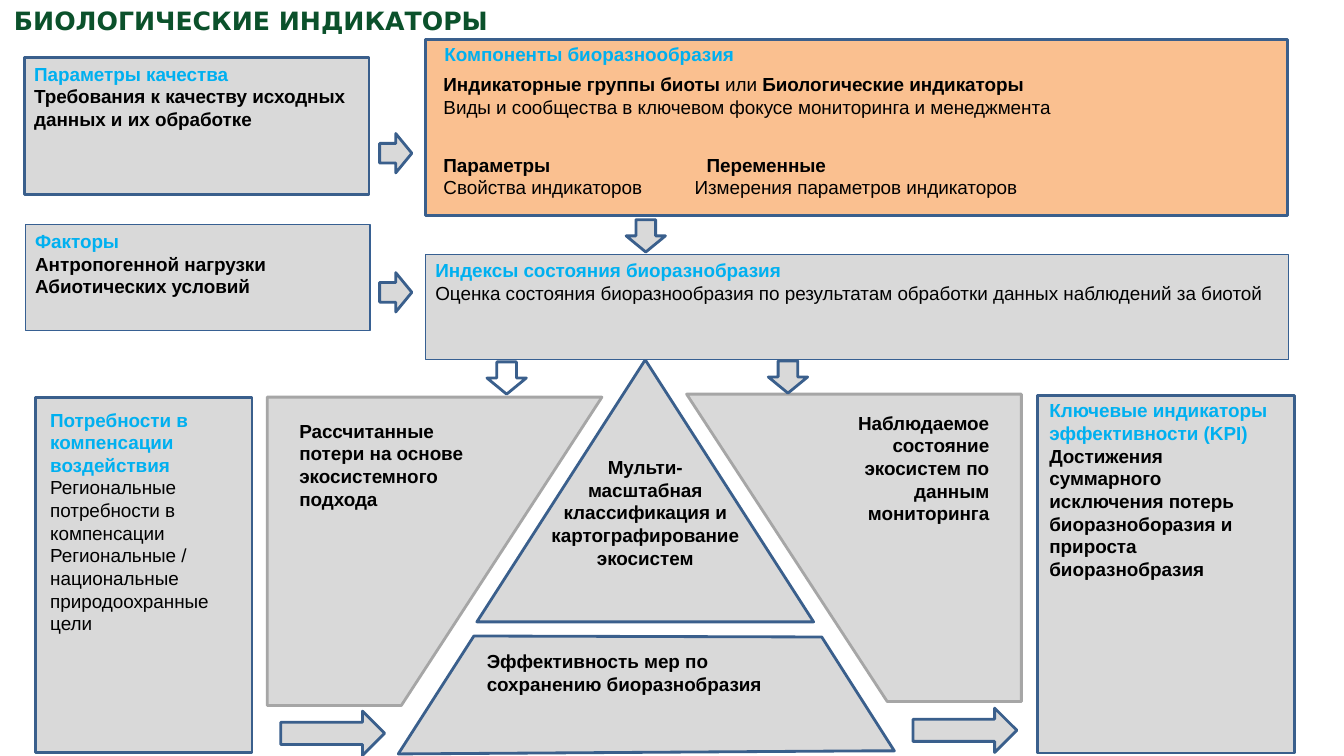
from lxml.etree import SubElement
from pptx import Presentation
from pptx.dml.color import RGBColor
from pptx.enum.shapes import MSO_SHAPE as Preset
from pptx.enum.text import MSO_ANCHOR as Anchor, PP_ALIGN as Align
from pptx.oxml.ns import qn
from pptx.util import Inches, Pt

GRAY, ORANGE, WHITE = "D9D9D9", "FAC090", "FFFFFF"
NAVY, BLUE, SILVER = "3A5F8C", "376092", "A6A6A6"
GREEN, SKY, BLACK = "0B512B", "00B0F0", "000000"


def rgb(color):
    return RGBColor.from_string(color)


def head(text):
    return [(text, SKY, True)]


def bold(text):
    return [(text, BLACK, True)]


def plain(text):
    return [(text, BLACK, False)]


class Diagram:
    unit = Inches(0.1)
    font = "Arial"
    size = 13.5

    def __init__(self, slide):
        self.shapes = slide.shapes

    def grid(self, *cells):
        return [round(cell * self.unit) for cell in cells]

    def paint(self, shape, fill, line, weight):
        shape.shadow.inherit = False
        shape.fill.solid()
        shape.fill.fore_color.rgb = rgb(fill)
        shape.line.color.rgb = rgb(line)
        shape.line.width = Pt(weight)

    def fill_text(self, frame, lines, align, font=None, size=None, tabs=()):
        frame.word_wrap = True
        frame.vertical_anchor = Anchor.TOP
        frame.text = "\n".join(line[0][0] for line in lines)
        for paragraph, line in zip(frame.paragraphs, lines):
            paragraph.alignment = align
            for text, _, _ in line[1:]:
                paragraph.add_run().text = text
            for run, (_, color, is_bold) in zip(paragraph.runs, line):
                run.font.name = font or self.font
                run.font.size = Pt(size or self.size)
                run.font.bold = is_bold
                run.font.color.rgb = rgb(color)
        for paragraph, column in zip(frame.paragraphs, tabs):
            stops = SubElement(paragraph._p.get_or_add_pPr(), qn("a:tabLst"))
            SubElement(stops, qn("a:tab"), pos=str(self.grid(column)[0]), algn="l")

    def label(self, area, lines, align=Align.LEFT, **style):
        box = self.shapes.add_textbox(*self.grid(*area))
        self.fill_text(box.text_frame, lines, align, **style)

    def panel(self, area, lines=(), preset=Preset.RECTANGLE, fill=GRAY, line=NAVY, weight=2):
        panel = self.shapes.add_shape(preset, *self.grid(*area))
        self.paint(panel, fill, line, weight)
        if lines:
            self.fill_text(panel.text_frame, lines, Align.LEFT)

    def arrow(self, left, top, width=3.9, height=3.2, rotation=0, fill=GRAY):
        arrow = self.shapes.add_shape(Preset.DOWN_ARROW, *self.grid(left, top, width, height))
        arrow.rotation = rotation
        self.paint(arrow, fill, NAVY, 2)

    def outline(self, corners, line):
        start, *rest = [self.grid(*corner) for corner in corners]
        builder = self.shapes.build_freeform(*start)
        builder.add_line_segments(rest, close=True)
        self.paint(builder.convert_to_shape(), GRAY, line, 2)


def main():
    deck = Presentation()
    deck.slide_width, deck.slide_height = Inches(13.33), Inches(7.5)
    diagram = Diagram(deck.slides.add_slide(deck.slide_layouts[6]))

    diagram.label((0.4, 0, 93.8, 4), [[("БИОЛОГИЧЕСКИЕ ИНДИКАТОРЫ", GREEN, True)]],
                  font="DejaVu Sans", size=18)

    diagram.panel((47.3, 35.7, 33.4, 26), preset=Preset.ISOSCELES_TRIANGLE)
    diagram.label((51.8, 44.7, 24.4, 16.7), [
        bold("Мульти-"),
        bold("масштабная классификация и картографирование экосистем"),
    ], Align.CENTER)

    diagram.panel((42.2, 3.9, 85.5, 17.5), fill=ORANGE)
    diagram.label((43.1, 3.7, 41.3, 4.4), [head("Компоненты биоразнообразия")])
    diagram.label((43, 6.7, 82.2, 5.6), [
        bold("Индикаторные группы биоты ") + plain("или") + bold(" Биологические индикаторы"),
        plain("Виды и сообщества в ключевом фокусе мониторинга и менеджмента"),
    ])
    diagram.label((43, 14.7, 82.2, 7.5), [
        bold("Параметры\tПеременные"),
        plain("Свойства индикаторов\tИзмерения параметров индикаторов"),
    ], tabs=(26.1, 24.9))

    diagram.panel((42.2, 25.2, 85.6, 10.5), [
        head("Индексы состояния биоразнобразия"),
        plain("Оценка состояния биоразнообразия по результатам обработки данных наблюдений за биотой"),
    ], line=BLUE, weight=0.75)
    diagram.panel((2.5, 22.3, 34.2, 10.5), [
        head("Факторы"),
        bold("Антропогенной нагрузки"),
        bold("Абиотических условий"),
    ], line=BLUE, weight=0.75)
    diagram.panel((2.4, 5.7, 34.2, 13.6), [
        head("Параметры качества"),
        bold("Требования к качеству исходных данных и их обработке"),
    ])

    diagram.outline([(59.7, 39.4), (39.8, 70), (26.5, 70), (26.5, 39.4)], SILVER)
    diagram.outline([(47, 63.1), (81.5, 63.2), (88.7, 74.5), (85.9, 74.5), (39.5, 74.8)], NAVY)
    diagram.outline([(68.1, 39.1), (88, 69.6), (101.3, 69.6), (101.3, 39.1)], SILVER)

    diagram.arrow(62.1, 21.8)
    diagram.arrow(48.3, 35.9, fill=WHITE)
    diagram.arrow(76.2, 35.8)
    for top in (13.6, 27.4):
        diagram.arrow(37.3, top, rotation=270)
    for left, top in ((30.8, 67.6), (93.5, 67.3)):
        diagram.arrow(left, top, 4.4, 10.3, rotation=270)

    diagram.panel((3.5, 39.4, 21.5, 35.3))
    diagram.panel((102.9, 39.2, 25.5, 35.5))
    diagram.label((28.7, 41.1, 21.5, 16.7),
                  [bold("Рассчитанные потери на основе экосистемного подхода")])
    diagram.label((77.6, 40.3, 21.5, 16.7), [
        bold("Наблюдаемое"),
        bold("состояние экосистем по данным мониторинга"),
    ], Align.RIGHT)
    diagram.label((103.1, 39.1, 24.7, 35.1), [
        head("Ключевые индикаторы эффективности (KPI)"),
        bold("Достижения суммарного исключения потерь биоразноборазия и прироста биоразнобразия"),
    ])
    diagram.label((4, 40, 21.3, 32), [
        head("Потребности в компенсации воздействия"),
        plain("Региональные потребности в компенсации"),
        plain("Региональные / национальные природоохранные цели"),
    ])
    diagram.label((47.3, 64, 34.3, 10.5), [
        bold("Эффективность мер по"),
        bold("сохранению биоразнобразия"),
    ])

    deck.save("out.pptx")


if __name__ == "__main__":
    main()
